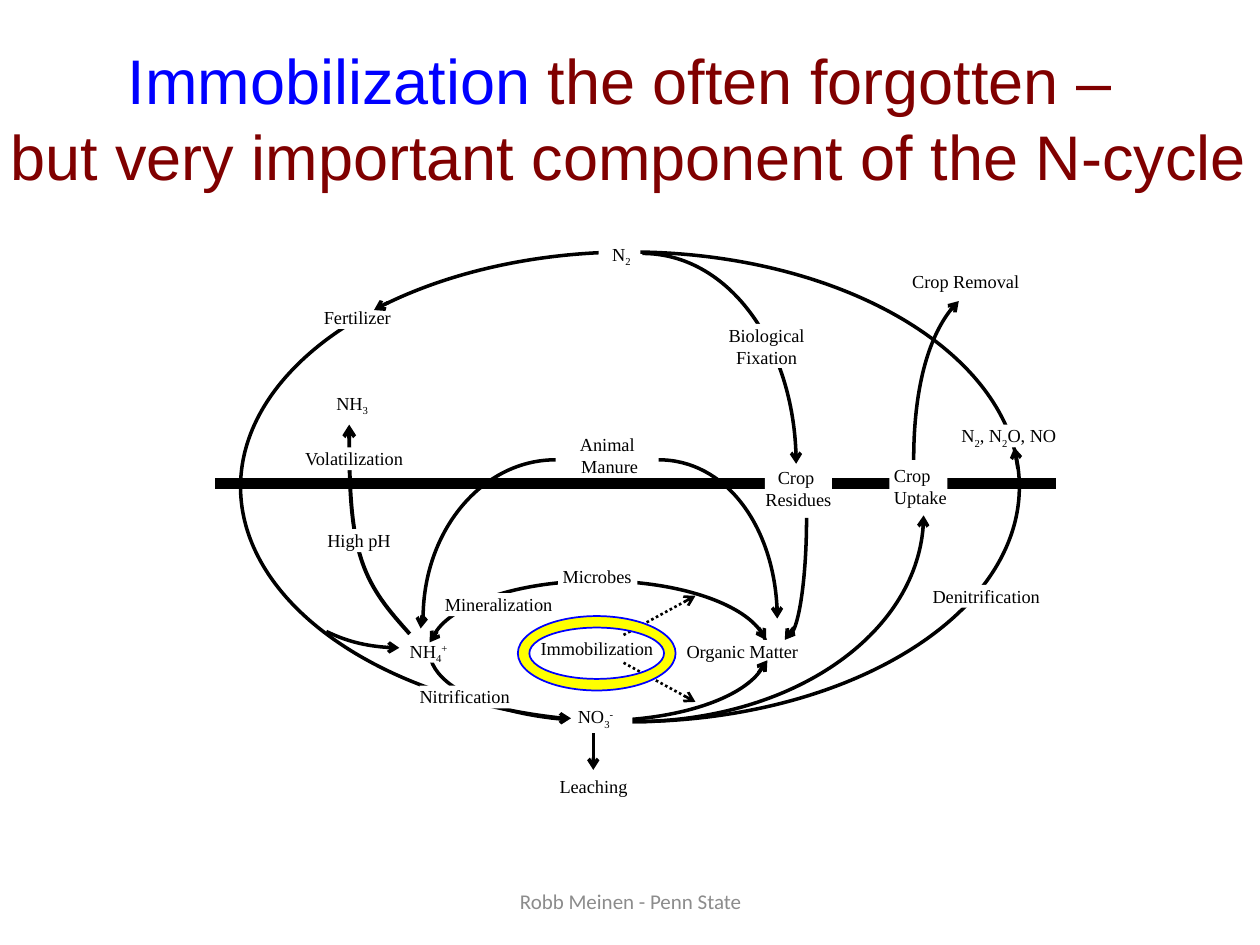
import pptx
import pptx.util
import pptx.dml.color
import pptx.enum.dml
import pptx.enum.shapes
import pptx.enum.text
from pptx.oxml import parse_xml
from pptx.oxml.ns import nsdecls, qn

Cm, Pt = pptx.util.Cm, pptx.util.Pt
RGB = pptx.dml.color.RGBColor
SHAPE = pptx.enum.shapes.MSO_SHAPE
ALIGN = pptx.enum.text.PP_ALIGN
MIDDLE = pptx.enum.text.MSO_ANCHOR.MIDDLE
DOTS = pptx.enum.dml.MSO_LINE.ROUND_DOT

BLACK = RGB(0, 0, 0)
WHITE = RGB(255, 255, 255)
BLUE = RGB(0, 0, 255)
MAROON = RGB(128, 0, 0)
YELLOW = RGB(255, 255, 0)
GRAY = RGB(140, 140, 140)

DROP = {"_": "-25000", "^": "30000"}  # marks for sub- and superscript

# Left, top, width, text; "_" lowers and "^" raises the next character
CLEAR = [
    (6.78, 7.9, 0.66, "NH_3"),
    (11.28, 15.62, 1.4, "Leaching"),
    (11.68, 8.74, 1.22, "Animal \nManure"),
]
LABELS = [
    (18.8, 11.79, 2.18, "Denitrification"),
    (8.97, 11.96, 2.18, "Mineralization"),
    (10.9, 12.85, 2.29, "Immobilization"),
    (8.46, 13.82, 1.83, "Nitrification"),
    (13.84, 12.9, 2.29, "Organic Matter"),
    (8.26, 12.9, 0.81, "NH_4^+"),
    (15.42, 9.4, 1.35, "Crop \nResidues"),
    (18.39, 5.44, 2.18, "Crop Removal"),
    (6.53, 6.17, 1.37, "Fertilizer"),
    (14.68, 6.53, 1.55, "Biological\nFixation"),
    (11.25, 11.4, 1.6, " Microbes"),
    (6.15, 9.02, 2.03, "Volatilization"),
    (6.6, 10.67, 1.3, "High pH"),
    (19.38, 8.56, 1.98, "N_2, N_2O, NO"),
]

# Bezier points, line width, arrowhead at the end, far corner of the frame
CURVES = [
    ([(16.26, 10.44), (16.26, 11.76), (16.08, 12.83), (15.88, 12.83)],
     2, False, None),
    ([(12.73, 14.55), (15.98, 14.55), (18.62, 12.67), (18.62, 10.39)],
     2, True, None),
    ([(8.53, 12.47), (8.53, 10.69), (9.73, 9.27), (11.2, 9.27)],
     2, False, None),
    ([(13.28, 9.27), (14.61, 9.27), (15.67, 10.69), (15.67, 12.47)],
     2, True, None),
    ([(18.42, 9.27), (18.42, 7.85), (18.77, 6.58), (19.33, 6.07)],
     2, True, (19.79, 9.27)),
    ([(12.95, 5.11), (14.66, 5.11), (16.05, 7.01), (16.05, 9.35)],
     2, True, None),
    ([(6.58, 12.73), (6.99, 12.93), (7.52, 13.06), (8.05, 13.06)],
     2, True, (8.08, 11.89)),
    ([(8.26, 12.78), (7.87, 12.34), (7.47, 11.91), (7.26, 11.2),
      (7.06, 10.52), (7.04, 9.53), (7.04, 8.56)], 2.25, True, None),
]

# Start x, y and end x, y
ARROWS = [
    (8.81, 12.73, 8.66, 12.95),
    (15.29, 13.56, 15.47, 13.31),
    (11.96, 14.78, 11.96, 15.52),
    (20.52, 9.45, 20.45, 9.02),
    (8.51, 12.4, 8.48, 12.67),
    (11.1, 14.48, 11.51, 14.48),
    (15.29, 12.65, 15.44, 12.9),
    (16, 12.65, 15.82, 12.9),
    (7.82, 6.1, 7.54, 6.25),
]
DOTTED = [(12.57, 12.8, 14.02, 12.01), (12.57, 13.36, 14.02, 14.15)]


def set_font(para, name, size, color=None):
    para.font.name = name
    para.font.size = Pt(size)
    if color is not None:
        para.font.color.rgb = color


def add_head(line):
    line._get_or_add_ln().append(
        parse_xml(f'<a:tailEnd {nsdecls("a")} type="arrow"/>'))


def add_line(slide, ends, width=2, head=True, dash=None):
    link = slide.shapes.add_connector(
        pptx.enum.shapes.MSO_CONNECTOR.STRAIGHT, *map(Cm, ends))
    link.line.color.rgb = BLACK
    link.line.width = Pt(width)
    if dash:
        link.line.dash_style = dash
    if head:
        add_head(link.line)
    link._element.spPr.append(parse_xml(f'<a:effectLst {nsdecls("a")}/>'))


def add_oval(slide, kind, box, color, width, fill=None):
    oval = slide.shapes.add_shape(kind, *map(Cm, box))
    oval.shadow.inherit = False
    oval.line.color.rgb = color
    oval.line.width = Pt(width)
    if fill is None:
        oval.fill.background()
    else:
        oval.fill.solid()
        oval.fill.fore_color.rgb = fill
    return oval


def bend(curve, corner):
    """Turn each three line segments into one cubic Bezier piece."""
    track = next(curve._element.iter(qn("a:path")))
    steps = track.findall(qn("a:lnTo"))
    if corner:
        track.remove(steps.pop())
    for i in range(0, len(steps), 3):
        piece = parse_xml(f'<a:cubicBezTo {nsdecls("a")}/>')
        track.append(piece)
        for step in steps[i:i + 3]:
            piece.append(step[0])
            track.remove(step)


def add_curve(slide, points, width, head, corner):
    pen = slide.shapes.build_freeform(*map(Cm, points[0]))
    knots = points[1:] + ([corner] if corner else [])
    pen.add_line_segments([(Cm(x), Cm(y)) for x, y in knots], close=False)
    curve = pen.convert_to_shape()
    bend(curve, corner)
    curve.shadow.inherit = False
    curve.fill.background()
    curve.line.color.rgb = BLACK
    curve.line.width = Pt(width)
    if head:
        add_head(curve.line)


def add_runs(para, text):
    plain, mark = "", None
    for char in text:
        if mark:
            run = para.add_run()
            run.text = char
            run.font._element.set("baseline", DROP[mark])
            mark = None
        elif char in DROP:
            if plain:
                para.add_run().text = plain
            plain, mark = "", char
        else:
            plain += char
    if plain:
        para.add_run().text = plain


def add_box(slide, box, sides=0.25, ends=0.13):
    area = slide.shapes.add_textbox(*map(Cm, box))
    frame = area.text_frame
    frame.margin_left = frame.margin_right = Cm(sides)
    frame.margin_top = frame.margin_bottom = Cm(ends)
    frame.word_wrap = True
    return area


def add_label(slide, left, top, width, text, height=None, pad=0,
              align=ALIGN.CENTER, fill=WHITE):
    rows = text.split("\n")
    high = height or (0.46 if len(rows) == 1 else 0.89)
    area = add_box(slide, (left, top, width, high), 0, 0)
    if fill is not None:
        area.fill.solid()
        area.fill.fore_color.rgb = fill
    frame = area.text_frame
    frame.margin_left = Cm(pad)
    frame.word_wrap = pad > 0
    for i, row in enumerate(rows):
        para = frame.add_paragraph() if i else frame.paragraphs[0]
        para.alignment = align if len(rows) > 1 else ALIGN.LEFT
        set_font(para, "Times New Roman", 10.5, BLACK)
        add_runs(para, row)


def add_title(slide):
    frame = add_box(slide, (-0.03, 1.19, 25.4, 2.36), 0.18, 0.1).text_frame
    frame.vertical_anchor = MIDDLE
    para = frame.paragraphs[0]
    para.text = ("Immobilization the often forgotten – \v"
                 "but very important component of the N-cycle")
    first, last = para.runs
    first.text = "Immobilization "
    rest = para.add_run()
    rest.text = "the often forgotten – "
    first._r.addnext(rest._r)
    para.alignment = ALIGN.CENTER
    set_font(para, "Arial", 36)
    for run, color in ((first, BLUE), (rest, MAROON), (last, MAROON)):
        run.font.color.rgb = color


def add_footer(slide):
    frame = add_box(slide, (8.69, 17.65, 8.05, 1.02)).text_frame
    frame.vertical_anchor = MIDDLE
    para = frame.paragraphs[0]
    para.text = "Robb Meinen - Penn State"
    para.alignment = ALIGN.CENTER
    set_font(para, "Calibri", 12, GRAY)


def main():
    deck = pptx.Presentation()
    deck.slide_width, deck.slide_height = Cm(25.4), Cm(19.05)
    slide = deck.slides.add_slide(deck.slide_layouts[6])
    add_title(slide)

    # Cycle outlines, soil surface and curved flows
    add_oval(slide, SHAPE.OVAL, (4.85, 5.08, 15.7, 9.47), BLACK, 2)
    add_oval(slide, SHAPE.OVAL, (8.66, 11.71, 6.81, 2.82), BLACK, 2)
    add_line(slide, (4.34, 9.75, 21.29, 9.75), width=6, head=False)
    for curve in CURVES:
        add_curve(slide, *curve)

    # Labels, most of which cover the lines behind them
    for label in CLEAR:
        add_label(slide, *label, fill=None)
    for label in LABELS:
        add_label(slide, *label)
    add_label(slide, 17.93, 9.35, 1.17, " Crop\n Uptake", align=ALIGN.LEFT)
    add_label(slide, 11.38, 14.22, 1.37, "NO_3^-", height=0.74, pad=0.27)
    add_label(slide, 12.07, 4.9, 0.84, "N_2", pad=0.27)

    # Straight arrows
    for ends in ARROWS:
        add_line(slide, ends)
    for ends in DOTTED:
        add_line(slide, ends, width=1.5, dash=DOTS)

    # Highlight ring and footer
    ring = add_oval(slide, SHAPE.DONUT, (10.44, 12.42, 3.18, 1.5), BLUE, 1, YELLOW)
    ring.adjustments[0] = 0.155
    add_footer(slide)
    deck.save("out.pptx")


if __name__ == "__main__":
    main()
